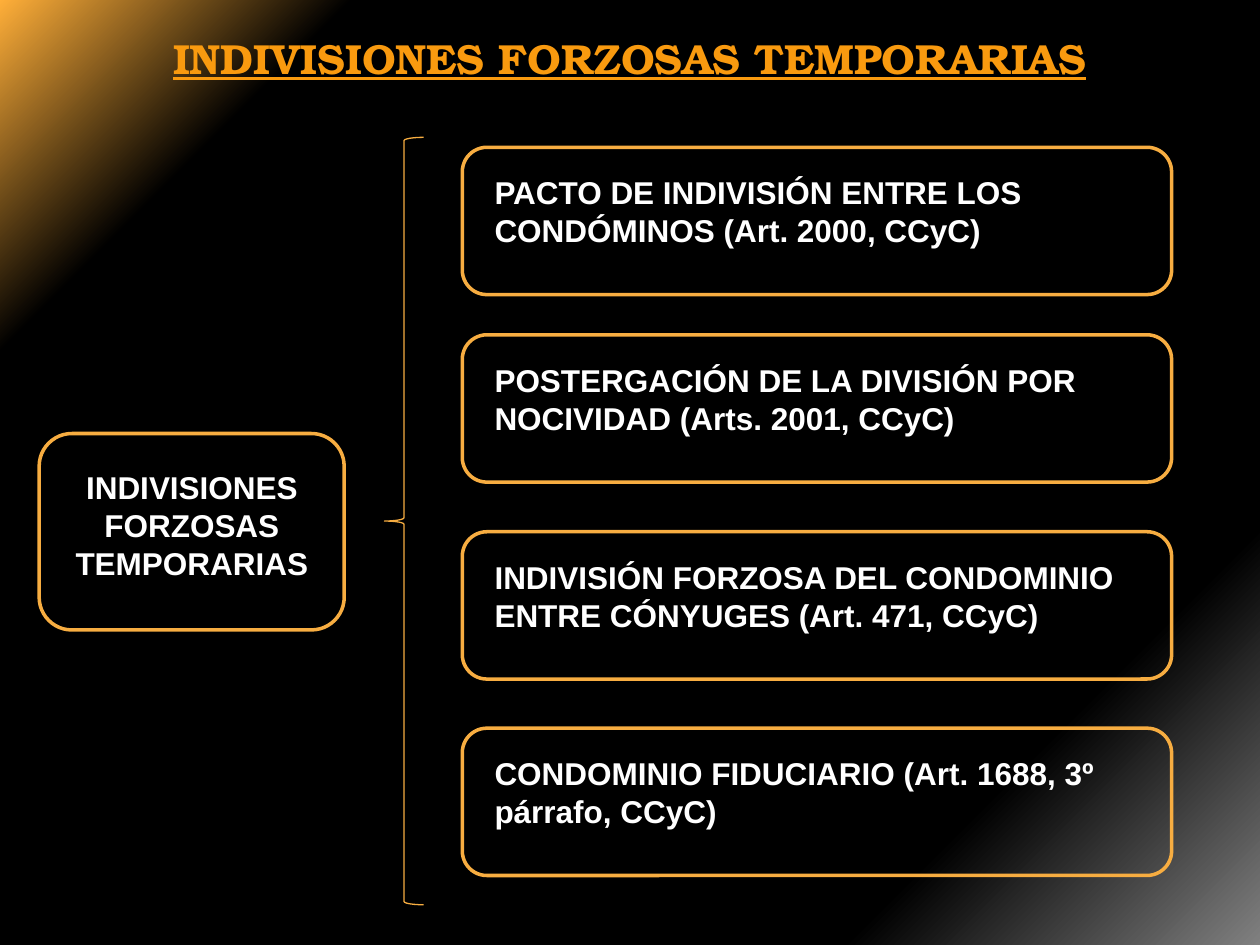
from lxml.etree import SubElement
from pptx import Presentation
from pptx.dml.color import RGBColor
from pptx.enum.shapes import MSO_SHAPE
from pptx.enum.text import MSO_ANCHOR, MSO_AUTO_SIZE, PP_ALIGN
from pptx.oxml.ns import qn
from pptx.util import Cm, Pt

COLORS = {
    "title": "F99A0F",
    "outline": "F7AD41",
    "text": "FFFFFF",
    "glow": "FFAF39",
    "night": "000000",
    "mist": "808080",
}
TITLE = "INDIVISIONES FORZOSAS TEMPORARIAS"
TOPIC = ["INDIVISIONES FORZOSAS", "TEMPORARIAS"]
CASES = [
    (2.97, "PACTO DE INDIVISIÓN ENTRE LOS CONDÓMINOS (Art. 2000, CCyC)"),
    (6.75, "POSTERGACIÓN DE LA DIVISIÓN POR NOCIVIDAD (Arts. 2001, CCyC)"),
    (10.72, "INDIVISIÓN FORZOSA DEL CONDOMINIO ENTRE CÓNYUGES (Art. 471, CCyC)"),
    (14.68, "CONDOMINIO FIDUCIARIO (Art. 1688, 3º párrafo, CCyC)"),
]


def paint_background(slide):
    """Fill the background with a diagonal glow fading to black and then grey."""
    fill = slide.background.fill
    fill.gradient()
    gradient = fill.gradient_stops[0].color
    stops = slide.background.fill._fill._gradFill.find(qn("a:gsLst"))
    for stop in list(stops):
        stops.remove(stop)
    for percent, name in [(0, "glow"), (16, "night"), (81, "night"), (100, "mist")]:
        stop = SubElement(stops, qn("a:gs"), pos=str(percent * 1000))
        SubElement(stop, qn("a:srgbClr"), val=COLORS[name])
    direction = slide.background.fill._fill._gradFill.find(qn("a:lin"))
    direction.set("ang", str(45 * 60000))
    direction.set("scaled", "0")


def write_text(holder, lines, *, size=18, font="Arial", color="text",
               align=PP_ALIGN.LEFT, anchor=MSO_ANCHOR.TOP, underline=None):
    """Write bold paragraphs into a text holder with the given format."""
    frame = holder.text_frame
    frame.text = "\n".join(lines)
    frame.word_wrap = True
    frame.auto_size = MSO_AUTO_SIZE.SHAPE_TO_FIT_TEXT
    frame.vertical_anchor = anchor
    for paragraph in frame.paragraphs:
        paragraph.alignment = align
        for run in paragraph.runs:
            run.font.size = Pt(size)
            run.font.name = font
            run.font.bold = True
            run.font.underline = underline
            run.font.color.rgb = RGBColor.from_string(COLORS[color])


def add_title(slide):
    """Place the underlined heading in the title placeholder."""
    heading = slide.shapes.title
    heading.left, heading.top = Cm(0.69), Cm(0.53)
    heading.width, heading.height = Cm(24), Cm(1.27)
    write_text(heading, [TITLE], size=24, font="TeX Gyre Bonum", color="title",
               align=PP_ALIGN.CENTER, anchor=MSO_ANCHOR.MIDDLE, underline=True)


def add_outline(slide, preset, left, top, width, height, weight):
    """Draw an unfilled preset shape with an orange outline."""
    outline = slide.shapes.add_shape(preset, Cm(left), Cm(top), Cm(width), Cm(height))
    outline.shadow.inherit = False
    outline.fill.background()
    outline.line.color.rgb = RGBColor.from_string(COLORS["outline"])
    outline.line.width = Pt(weight)


def add_card(slide, lines, left, top, width, height, text_box, **text_format):
    """Draw a rounded card and its text, offset from the card's corner."""
    add_outline(slide, MSO_SHAPE.ROUNDED_RECTANGLE, left, top, width, height, 2)
    dx, dy, text_width, text_height = text_box
    caption = slide.shapes.add_textbox(
        Cm(left + dx), Cm(top + dy), Cm(text_width), Cm(text_height))
    write_text(caption, lines, **text_format)


def main():
    """Build the slide and save it."""
    presentation = Presentation()
    presentation.slide_width, presentation.slide_height = Cm(25.4), Cm(19.05)
    slide = presentation.slides.add_slide(presentation.slide_layouts[5])
    paint_background(slide)
    add_title(slide)
    add_card(slide, TOPIC, 0.79, 8.74, 6.15, 3.96, (0.4, 0.58, 5.36, 2.57),
             align=PP_ALIGN.CENTER)
    for top, case in CASES:
        add_card(slide, [case], 9.32, top, 14.3, 2.97, (0.4, 0.4, 13.28, 1.8))
    add_outline(slide, MSO_SHAPE.LEFT_BRACE, 7.75, 2.77, 0.79, 15.47, 0.75)
    presentation.save("out.pptx")


if __name__ == "__main__":
    main()
